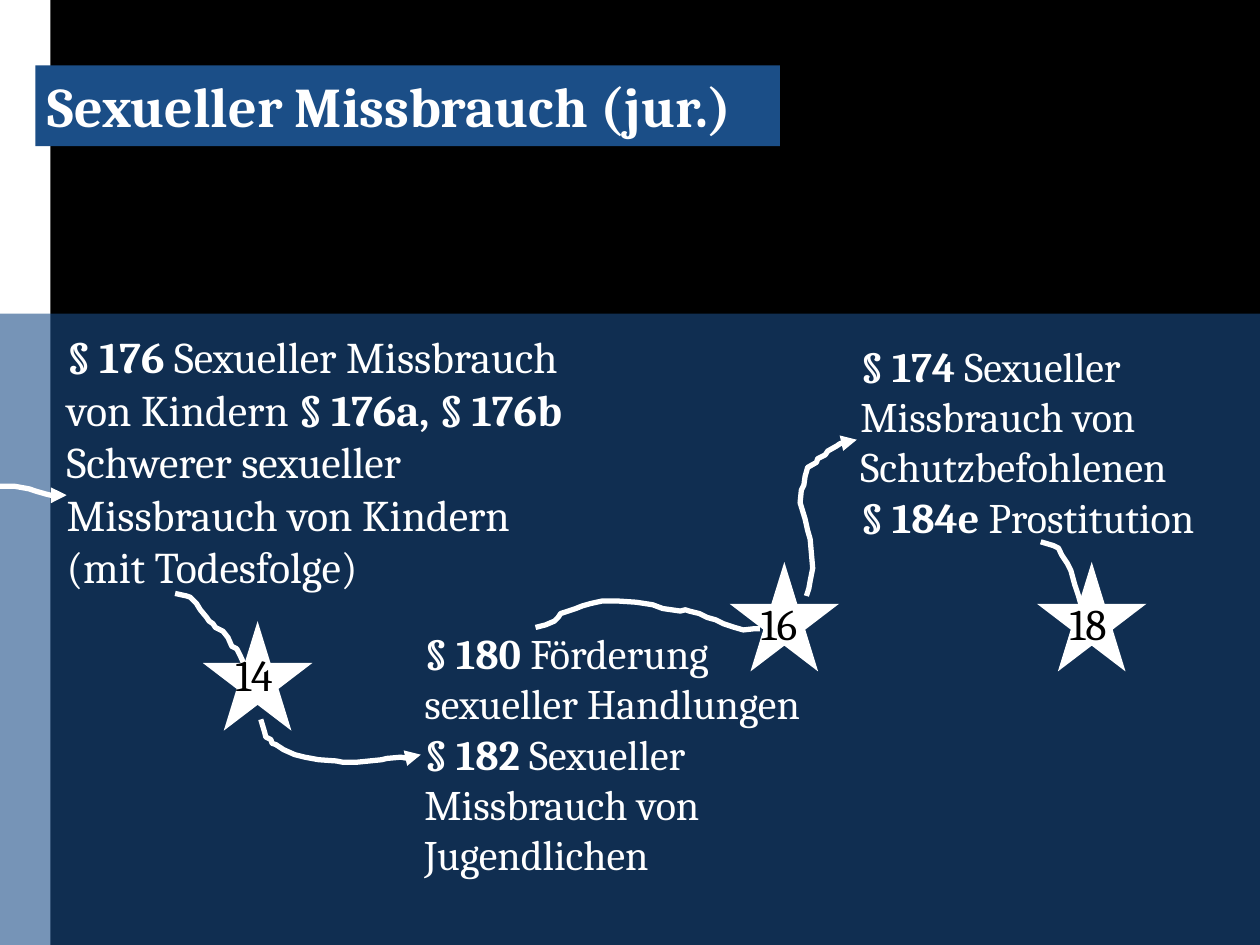
from lxml import etree
from pptx import Presentation
from pptx import util as u
from pptx.dml.color import RGBColor
from pptx.enum import shapes, text
from pptx.oxml import ns

WHITE = RGBColor(0xFF, 0xFF, 0xFF)
BLACK = RGBColor(0, 0, 0)
BLUE = RGBColor(0x1B, 0x4E, 0x87)
FONT = "Cambria"
CELL = u.Inches(0.01)  # the slide is a grid of 1000 columns by 750 rows
KIND = shapes.MSO_SHAPE

deck = Presentation()
deck.slide_width, deck.slide_height = 1000 * CELL, 750 * CELL
slide = deck.slides.add_slide(deck.slide_layouts[6])
slide.background.fill.solid()
slide.background.fill.fore_color.rgb = BLACK


def block(kind, box, color):
    shape = slide.shapes.add_shape(kind, *[n * CELL for n in box])
    shape.shadow.inherit = False
    shape.fill.solid()
    shape.fill.fore_color.rgb = color
    shape.line.fill.background()
    return shape


def write(shape, paras, size, color):
    """Fill a shape with paragraphs, each a list of (words, bold) runs."""
    frame = shape.text_frame
    frame.word_wrap = True
    frame.vertical_anchor = text.MSO_ANCHOR.TOP
    for i, runs in enumerate(paras):
        para = frame.add_paragraph() if i else frame.paragraphs[0]
        para.alignment = text.PP_ALIGN.LEFT
        for words, bold in runs:
            run = para.add_run()
            run.text = words
            run.font.name = FONT
            run.font.size = u.Pt(size)
            run.font.bold = bold
            run.font.color.rgb = color


# Side strip and the translucent lower panel
block(KIND.RECTANGLE, (0, 0, 40, 750), WHITE)
panel = block(KIND.RECTANGLE, (-28, 249, 1158, 504), BLUE)
tint = panel._element.spPr.find(".//" + ns.qn("a:srgbClr"))
etree.SubElement(tint, ns.qn("a:alpha"), val="60000")

# Age limits
stars = [("14", 161, 493, 177, 509), ("16", 579, 446, 594, 469),
         ("18", 823, 446, 839, 469)]
for age, left, top, _, _ in stars:
    block(KIND.STAR_5_POINT, (left, top, 87, 87), WHITE)

# Sections of the law
laws = [
    ((43, 257, 441, 220), 25, [
        [("§ 176 ", True), ("Sexueller Missbrauch von Kindern ", False),
         ("§ 176a, § 176b", True)],
        [("Schwerer sexueller Missbrauch von Kindern (mit Todesfolge)", False)]]),
    ((327, 493, 331, 252), 24, [
        [("§ 180 ", True), ("Förderung sexueller Handlungen", False)],
        [("§ 182 ", True), ("Sexueller Missbrauch von Jugendlichen", False)]]),
    ((673, 265, 331, 172), 24, [
        [("§ 174 ", True), ("Sexueller Missbrauch von Schutzbefohlenen", False)],
        [("§ 184e ", True), ("Prostitution", False)]]),
]
for box, size, paras in laws:
    label = slide.shapes.add_textbox(*[n * CELL for n in box])
    write(label, paras, size, WHITE)

# Hand-drawn strokes: has an arrowhead, points
strokes = [
    (False, [(139, 471), (148, 473), (151, 474), (156, 479), (159, 484),
             (164, 490), (166, 493), (169, 495), (171, 498), (177, 501),
             (181, 506), (184, 513), (188, 515), (191, 521), (195, 530),
             (198, 534), (204, 538), (208, 543), (209, 546)]),
    (True, [(-23, 390), (-11, 388), (-8, 387), (0, 386), (12, 386), (23, 388),
            (29, 390), (36, 392), (40, 393), (46, 394), (53, 393)]),
    (True, [(207, 571), (210, 581), (211, 585), (215, 587), (216, 590),
            (219, 591), (225, 595), (234, 599), (242, 601), (253, 603),
            (267, 604), (272, 605), (283, 605), (303, 603), (307, 602),
            (318, 601), (324, 602), (330, 601), (334, 599)]),
    (False, [(425, 498), (433, 496), (440, 493), (443, 490), (445, 487),
             (451, 485), (457, 483), (462, 481), (469, 479), (478, 477),
             (490, 477), (505, 478), (518, 480), (526, 483), (540, 485),
             (544, 484), (547, 485), (555, 487), (561, 490), (568, 492),
             (574, 495), (583, 498), (590, 500), (599, 499), (603, 499)]),
    (True, [(640, 473), (642, 467), (643, 461), (645, 451), (643, 428),
            (641, 421), (639, 412), (635, 399), (636, 389), (638, 385),
            (639, 378), (641, 371), (648, 367), (649, 364), (655, 361),
            (657, 358), (664, 354), (667, 352), (677, 349), (680, 349)]),
    (False, [(826, 430), (836, 433), (840, 435), (843, 441), (847, 447),
             (850, 453), (853, 464), (856, 473), (858, 480), (859, 484),
             (861, 488)]),
]
for arrow, points in strokes:
    pen = slide.shapes.build_freeform(*points[0], scale=CELL)
    pen.add_line_segments(points[1:], close=False)
    stroke = pen.convert_to_shape()
    stroke.shadow.inherit = False
    stroke.fill.background()
    stroke.line.color.rgb = WHITE
    stroke.line.width = u.Pt(3)
    line = stroke.line._get_or_add_ln()
    etree.SubElement(line, ns.qn("a:round"))
    if arrow:
        etree.SubElement(line, ns.qn("a:tailEnd"), type="triangle")

# Numbers on the stars
for age, _, _, left, top in stars:
    label = slide.shapes.add_textbox(left * CELL, top * CELL, 60 * CELL, 52 * CELL)
    write(label, [[(age, False)]], 25, BLACK)

title = block(KIND.RECTANGLE, (28, 52, 591, 64), BLUE)
write(title, [[("Sexueller Missbrauch (jur.)", True)]], 32, WHITE)

deck.save("out.pptx")
